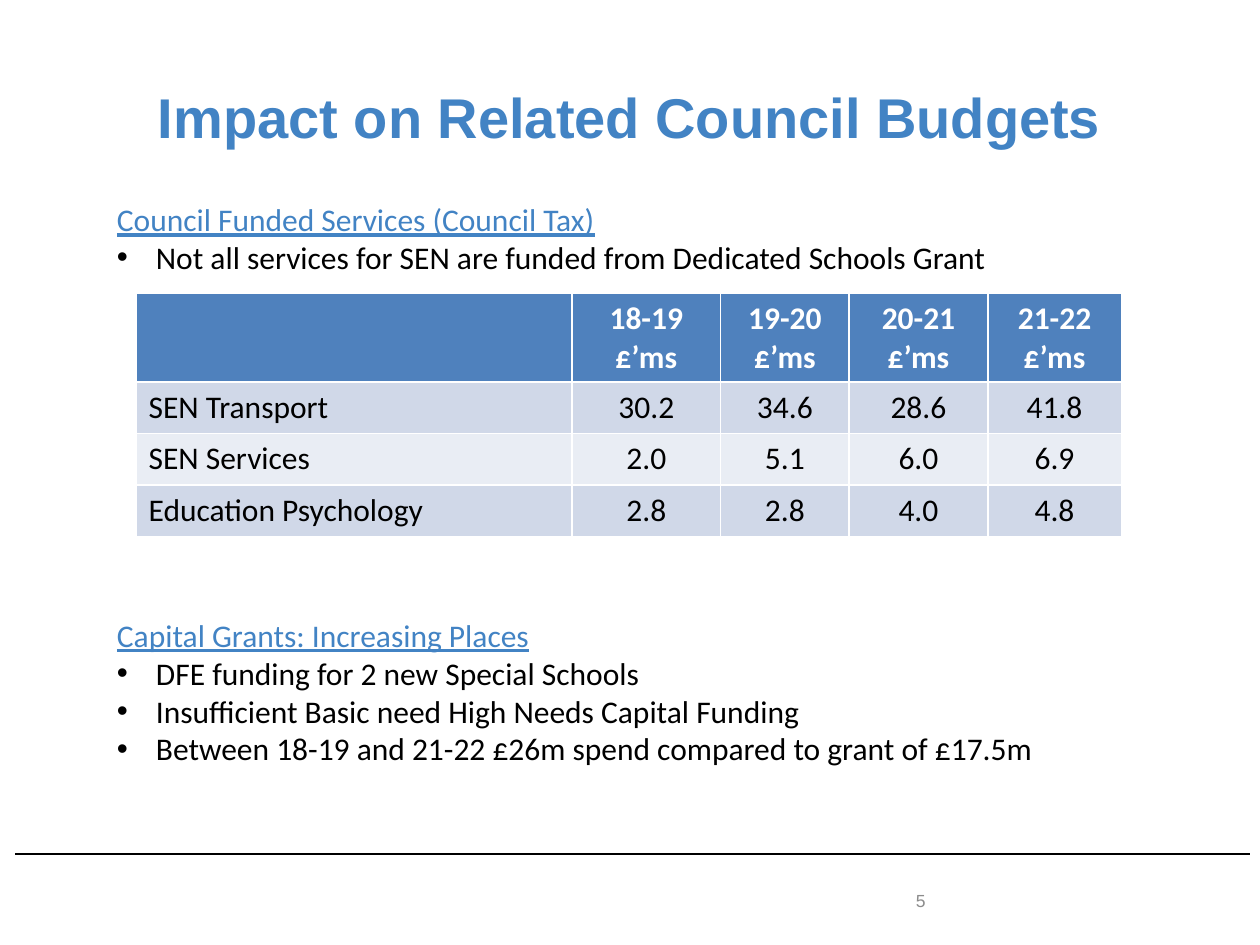
"""Build the slide on related council budgets."""
from dataclasses import dataclass

from lxml import etree
from pptx import Presentation
from pptx.dml.color import RGBColor
from pptx.enum import shapes, text
from pptx.oxml import ns
from pptx.util import Inches, Pt


@dataclass(frozen=True)
class Theme:
    blue: str = "4283C4"
    head: str = "4F81BD"
    bands: tuple = ("D0D8E8", "E9EDF4")
    black: str = "000000"
    white: str = "FFFFFF"
    grey: str = "8C8C8C"
    sans: str = "Arial"
    body: str = "Calibri"
    title: int = 32
    main: int = 18
    small: int = 10


@dataclass(frozen=True)
class Block:
    top: float
    head: str
    items: tuple


THEME = Theme()
BLOCKS = (
    Block(1.54, "Council Funded Services (Council Tax)",
          ("Not all services for SEN are funded from Dedicated Schools Grant",)),
    Block(4.84, "Capital Grants: Increasing Places",
          ("DFE funding for 2 new Special Schools",
           "Insufficient Basic need High Needs Capital Funding",
           "Between 18-19 and 21-22 £26m spend compared to grant of £17.5m")),
)
YEARS = ("18-19", "19-20", "20-21", "21-22")
ROWS = (
    ("", *(f"{year} £’ms" for year in YEARS)),
    ("SEN Transport", "30.2", "34.6", "28.6", "41.8"),
    ("SEN Services", "2.0", "5.1", "6.0", "6.9"),
    ("Education Psychology", "2.8", "2.8", "4.0", "4.8"),
)
WIDTHS = (3.46, 1.18, 1.02, 1.1, 1.06)
HEIGHTS = (0.69, 0.41, 0.41, 0.41)


def style(para, color: str, size: int = THEME.main, face: str = THEME.body,
          bold: bool = False, line: bool = False) -> None:
    """Set the font of a paragraph."""
    font = para.font
    font.name, font.size = face, Pt(size)
    font.bold, font.underline = bold, line
    font.color.rgb = RGBColor.from_string(color)


def add_box(slide, left: float, top: float, width: float, height: float):
    """Add a wrapping text box and return its frame."""
    frame = slide.shapes.add_textbox(*map(Inches, (left, top, width, height))).text_frame
    frame.word_wrap = True
    return frame


def add_dot(para) -> None:
    """Give a paragraph a hanging bullet."""
    props = para._p.get_or_add_pPr()
    props.set("marL", str(Inches(0.31)))
    props.set("indent", str(-Inches(0.31)))
    etree.SubElement(props, ns.qn("a:buFont"), typeface=THEME.sans)
    etree.SubElement(props, ns.qn("a:buChar"), char="•")


def add_block(slide, block: Block) -> None:
    """Draw an underlined heading and its bullets."""
    frame = add_box(slide, 0.83, block.top, 8.27, 0.1 + 0.3 * (1 + len(block.items)))
    head = frame.paragraphs[0]
    head.text = block.head
    style(head, THEME.blue, line=True)
    for item in block.items:
        para = frame.add_paragraph()
        para.text = item
        add_dot(para)
        style(para, THEME.black)


def add_grid(slide) -> None:
    """Draw the budget table."""
    grid = slide.shapes.add_table(
        len(ROWS), len(WIDTHS), Inches(1.08), Inches(2.33),
        Inches(sum(WIDTHS)), Inches(sum(HEIGHTS))).table
    for col, width in zip(grid.columns, WIDTHS):
        col.width = Inches(width)
    for r, (row, height) in enumerate(zip(ROWS, HEIGHTS)):
        grid.rows[r].height = Inches(height)
        fill = THEME.bands[(r - 1) % 2] if r else THEME.head
        for c, value in enumerate(row):
            cell = grid.cell(r, c)
            cell.fill.solid()
            cell.fill.fore_color.rgb = RGBColor.from_string(fill)
            cell.text = value
            para = cell.text_frame.paragraphs[0]
            para.alignment = text.PP_ALIGN.CENTER if c else text.PP_ALIGN.LEFT
            style(para, THEME.black if r else THEME.white, bold=not r)


def add_rule(slide) -> None:
    """Draw the footer line."""
    rule = slide.shapes.add_connector(
        shapes.MSO_CONNECTOR.STRAIGHT, *map(Inches, (0.12, 6.78, 9.92, 6.78)))
    rule.line.color.rgb = RGBColor.from_string(THEME.black)
    rule.line.width = Pt(1)
    etree.SubElement(rule._element.spPr, ns.qn("a:effectLst"))


def add_title(slide, words: str) -> None:
    """Place and format the title."""
    title = slide.shapes.title
    title.left, title.top, title.width, title.height = map(Inches, (0.5, 0.3, 9, 1.25))
    frame = title.text_frame
    frame.text = words
    frame.vertical_anchor = text.MSO_ANCHOR.MIDDLE
    para = frame.paragraphs[0]
    para.alignment = text.PP_ALIGN.CENTER
    style(para, THEME.blue, THEME.title, THEME.sans, bold=True)


def add_page(slide, number: str) -> None:
    """Draw the slide number."""
    frame = add_box(slide, 7.17, 6.95, 2.33, 0.4)
    frame.vertical_anchor = text.MSO_ANCHOR.MIDDLE
    frame.text = number
    style(frame.paragraphs[0], THEME.grey, THEME.small, THEME.sans)


def main() -> None:
    """Build and save the deck."""
    deck = Presentation()
    deck.slide_width, deck.slide_height = Inches(10), Inches(7.5)
    slide = deck.slides.add_slide(deck.slide_layouts[5])
    add_rule(slide)
    add_title(slide, "Impact on Related Council Budgets")
    add_page(slide, "5")
    for block in BLOCKS:
        add_block(slide, block)
    add_grid(slide)
    deck.save("out.pptx")


if __name__ == "__main__":
    main()
